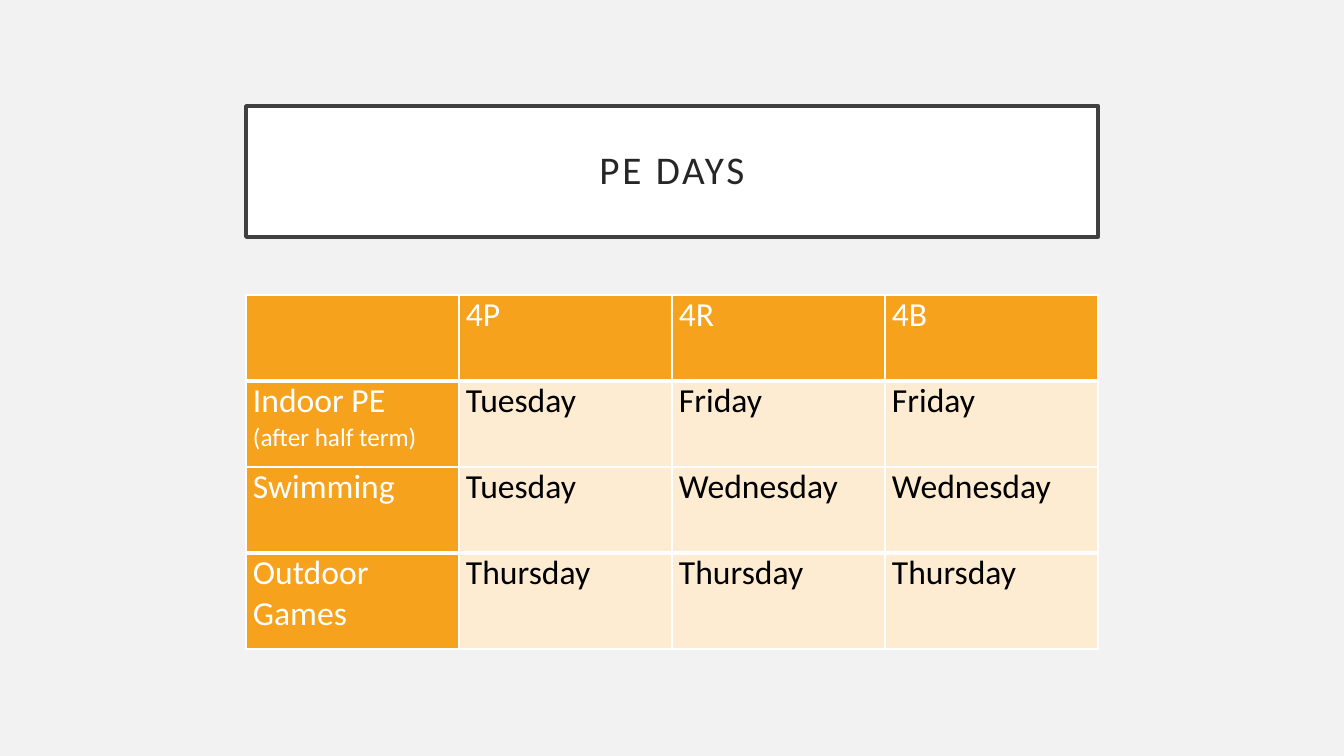
from lxml import etree
from pptx import Presentation
from pptx import util as u
from pptx.dml.color import RGBColor
from pptx.enum import text
from pptx.oxml.ns import qn

PX = 914400 / 100.8
HUES = {"back": "F2F2F2", "white": "FFFFFF", "frame": "404040", "title": "262626",
        "head": "F6A21D", "body": "FDECD2", "black": "000000"}
ROWS = [["", "4P", "4R", "4B"],
        ["Indoor PE\n(after half term)", "Tuesday", "Friday", "Friday"],
        ["Swimming", "Tuesday", "Wednesday", "Wednesday"],
        ["Outdoor Games", "Thursday", "Thursday", "Thursday"]]
HIGHS = [86, 86, 86, 96]


def px(n):
    return u.Emu(round(n * PX))


def paint(fill, hue):
    fill.solid()
    fill.fore_color.rgb = RGBColor.from_string(HUES[hue])


def write(para, words, size=24, hue="black", align=text.PP_ALIGN.JUSTIFY,
          lines=1.0, track=0):
    """Fill a paragraph with one run; track is letter spacing in points."""
    para.alignment = align
    para.line_spacing = lines
    run = para.add_run()
    run.text = words
    font = run.font
    font.name, font.size, font.bold = "Calibri", u.Pt(size), False
    font.color.rgb = RGBColor.from_string(HUES[hue])
    if track:
        run._r.get_or_add_rPr().set("spc", str(track * 100))


def edge(cell, side, width):
    """Draw a white border on side L, R, T or B, width in points."""
    line = etree.SubElement(cell._tc.get_or_add_tcPr(), qn("a:ln" + side),
                            w=str(u.Pt(width)))
    fill = etree.SubElement(line, qn("a:solidFill"))
    etree.SubElement(fill, qn("a:srgbClr"), val=HUES["white"])


class Board:
    def __init__(self, deck):
        self.slide = deck.slides.add_slide(deck.slide_layouts[5])
        paint(self.slide.background.fill, "back")

    def title(self, words, x, y, w, h):
        box = self.slide.shapes.title
        box.left, box.top, box.width, box.height = map(px, (x, y, w, h))
        paint(box.fill, "white")
        paint(box.line.fill, "frame")
        box.line.width = u.Pt(2.5)
        frame = box.text_frame
        frame.auto_size = text.MSO_AUTO_SIZE.NONE
        frame.word_wrap = True
        frame.vertical_anchor = text.MSO_ANCHOR.MIDDLE
        frame.margin_left = frame.margin_right = px(20)
        frame.margin_top = frame.margin_bottom = px(20)
        write(frame.paragraphs[0], words, 28, "title", text.PP_ALIGN.CENTER, 0.9, 2)

    def table(self, rows, highs, x, y, w):
        grid = self.slide.shapes.add_table(len(rows), len(rows[0]), px(x), px(y),
                                           px(w), px(sum(highs))).table
        grid.first_row = grid.horz_banding = False
        for r, row in enumerate(rows):
            grid.rows[r].height = px(highs[r])
            for c, words in enumerate(row):
                self.cell(grid.cell(r, c), words, r, c, len(rows) - 1)

    def cell(self, cell, words, r, c, last):
        head = r == 0 or c == 0
        cell.margin_left = cell.margin_right = px(7)
        cell.margin_top = cell.margin_bottom = 0
        # Thick rules lie under the header and above the last row.
        for side, wide in (("L", 1), ("R", 1), ("T", 3 if r in (1, last) else 1),
                           ("B", 3 if r in (0, last - 1) else 1)):
            edge(cell, side, wide)
        paint(cell.fill, "head" if head else "body")
        if not words:
            return
        frame = cell.text_frame
        hue = "white" if head else "black"
        first, *notes = words.split("\n")
        write(frame.paragraphs[0], first, hue=hue)
        for note in notes:
            write(frame.add_paragraph(), note, 18, hue, text.PP_ALIGN.LEFT)


def main():
    deck = Presentation()
    deck.slide_width, deck.slide_height = px(1344), px(756)
    board = Board(deck)
    board.title("PE DAYS", 246, 106, 852, 131)
    board.table(ROWS, HIGHS, 246, 295, 852)
    deck.save("out.pptx")


if __name__ == "__main__":
    main()
